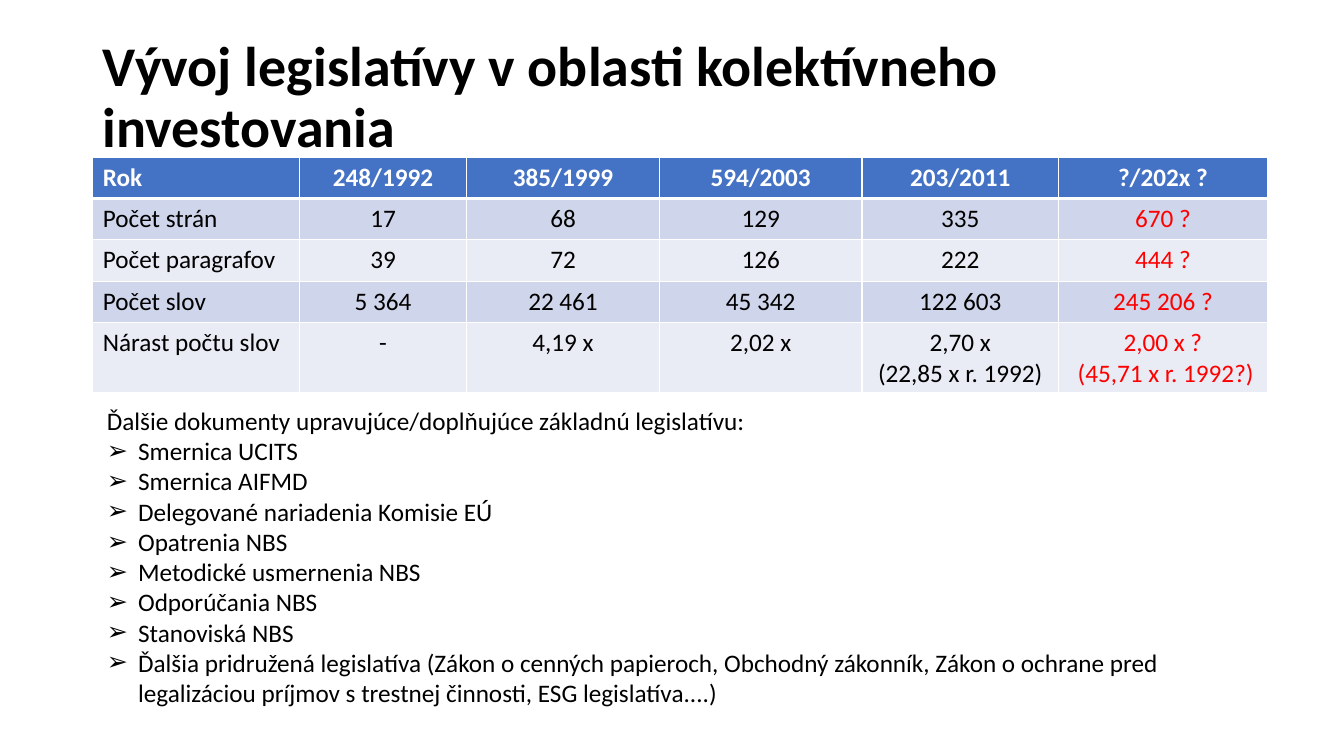
from lxml import etree
from pptx import Presentation
from pptx import util as u
from pptx.dml.color import RGBColor
from pptx.enum import text
from pptx.oxml import ns

COLORS = {
    "black": "000000",
    "white": "FFFFFF",
    "red": "FF0000",
    "header": "4472C4",
    "odd": "CFD5EA",
    "even": "E9EBF5",
}
FONT = "Calibri"
TITLE = "Vývoj legislatívy v oblasti kolektívneho investovania"
ROWS = [
    ["Rok", "248/1992", "385/1999", "594/2003", "203/2011", "?/202x ?"],
    ["Počet strán", "17", "68", "129", "335", "670 ?"],
    ["Počet paragrafov", "39", "72", "126", "222", "444 ?"],
    ["Počet slov", "5 364", "22 461", "45 342", "122 603", "245 206 ?"],
    ["Nárast počtu slov", "-", "4,19 x", "2,02 x",
     "2,70 x\n(22,85 x r. 1992)", "2,00 x ?\n (45,71 x r. 1992?)"],
]
COLUMN_WIDTHS = [2.05, 1.66, 1.91, 2.01, 1.95, 2.07]
ROW_HEIGHTS = [0.41, 0.41, 0.41, 0.41, 0.69]
INTRO = "Ďalšie dokumenty upravujúce/doplňujúce základnú legislatívu:"
DOCUMENTS = [
    "Smernica UCITS",
    "Smernica AIFMD",
    "Delegované nariadenia Komisie EÚ",
    "Opatrenia NBS",
    "Metodické usmernenia NBS",
    "Odporúčania NBS",
    "Stanoviská NBS",
    "Ďalšia pridružená legislatíva (Zákon o cenných papieroch, Obchodný zákonník, "
    "Zákon o ochrane pred legalizáciou príjmov s trestnej činnosti, ESG legislatíva....)",
]


def set_attributes(target, values):
    for name, value in values.items():
        setattr(target, name, value)


def color(name):
    return RGBColor.from_string(COLORS[name])


def format_text(frame, size, color_name, bold=False, **paragraph_format):
    for paragraph in frame.paragraphs:
        set_attributes(paragraph, paragraph_format)
        for run in paragraph.runs:
            set_attributes(run.font, {"name": FONT, "size": u.Pt(size), "bold": bold})
            run.font.color.rgb = color(color_name)


def place(shape, left, top, width, height):
    set_attributes(shape, {
        "left": u.Inches(left), "top": u.Inches(top),
        "width": u.Inches(width), "height": u.Inches(height),
    })


def add_title(slide):
    title = slide.shapes.title
    place(title, 0.92, 0.4, 11.5, 1.16)
    frame = title.text_frame
    frame.text = TITLE
    set_attributes(frame, {
        "word_wrap": True,
        "auto_size": text.MSO_AUTO_SIZE.NONE,
        "vertical_anchor": text.MSO_ANCHOR.MIDDLE,
    })
    format_text(frame, 40, "black", True,
                alignment=text.PP_ALIGN.LEFT, line_spacing=0.9)


def add_borders(cell, bottom_width):
    properties = cell._tc.get_or_add_tcPr()
    for side, width in {"L": 1, "R": 1, "T": 1, "B": bottom_width}.items():
        line = etree.SubElement(properties, ns.qn(f"a:ln{side}"), w=str(u.Pt(width)))
        fill = etree.SubElement(line, ns.qn("a:solidFill"))
        etree.SubElement(fill, ns.qn("a:srgbClr"), val=COLORS["white"])


def fill_cell(cell, content, row, column):
    is_header = row == 0
    is_forecast = column == len(COLUMN_WIDTHS) - 1
    cell.text = content
    text_color = "white" if is_header else "red" if is_forecast else "black"
    alignment = text.PP_ALIGN.CENTER if column else text.PP_ALIGN.LEFT
    format_text(cell.text_frame, 18, text_color, is_header, alignment=alignment)
    add_borders(cell, 3 if is_header else 1)
    cell.fill.solid()
    background = "header" if is_header else "odd" if row % 2 else "even"
    cell.fill.fore_color.rgb = color(background)


def add_legislation_table(slide):
    table = slide.shapes.add_table(
        len(ROWS), len(COLUMN_WIDTHS), u.Inches(0.92), u.Inches(1.56),
        u.Inches(sum(COLUMN_WIDTHS)), u.Inches(sum(ROW_HEIGHTS))).table
    for column, width in zip(table.columns, COLUMN_WIDTHS):
        column.width = u.Inches(width)
    for row, height in zip(table.rows, ROW_HEIGHTS):
        row.height = u.Inches(height)
    for row, contents in enumerate(ROWS):
        for column, content in enumerate(contents):
            fill_cell(table.cell(row, column), content, row, column)


def set_bullet(paragraph, character=None):
    properties = paragraph._p.get_or_add_pPr()
    indent = u.Inches(0.31) if character else 0
    properties.set("marL", str(indent))
    properties.set("indent", str(-indent))
    if character:
        etree.SubElement(properties, ns.qn("a:buChar"), char=character)
    else:
        etree.SubElement(properties, ns.qn("a:buNone"))


def add_document_list(slide):
    body = slide.placeholders[1]
    place(body, 0.96, 3.97, 11.42, 3.13)
    frame = body.text_frame
    frame.text = "\n".join([INTRO, *DOCUMENTS])
    set_attributes(frame, {
        "word_wrap": True,
        "auto_size": text.MSO_AUTO_SIZE.SHAPE_TO_FIT_TEXT,
        "vertical_anchor": text.MSO_ANCHOR.TOP,
    })
    format_text(frame, 18, "black", alignment=text.PP_ALIGN.LEFT,
                line_spacing=1.0, space_before=u.Pt(0), space_after=u.Pt(0))
    intro, *documents = frame.paragraphs
    set_bullet(intro)
    for paragraph in documents:
        set_bullet(paragraph, "➢")


def main():
    presentation = Presentation()
    set_attributes(presentation, {
        "slide_width": u.Inches(13.33), "slide_height": u.Inches(7.5),
    })
    slide = presentation.slides.add_slide(presentation.slide_layouts[1])
    add_title(slide)
    add_legislation_table(slide)
    add_document_list(slide)
    presentation.save("out.pptx")


if __name__ == "__main__":
    main()
